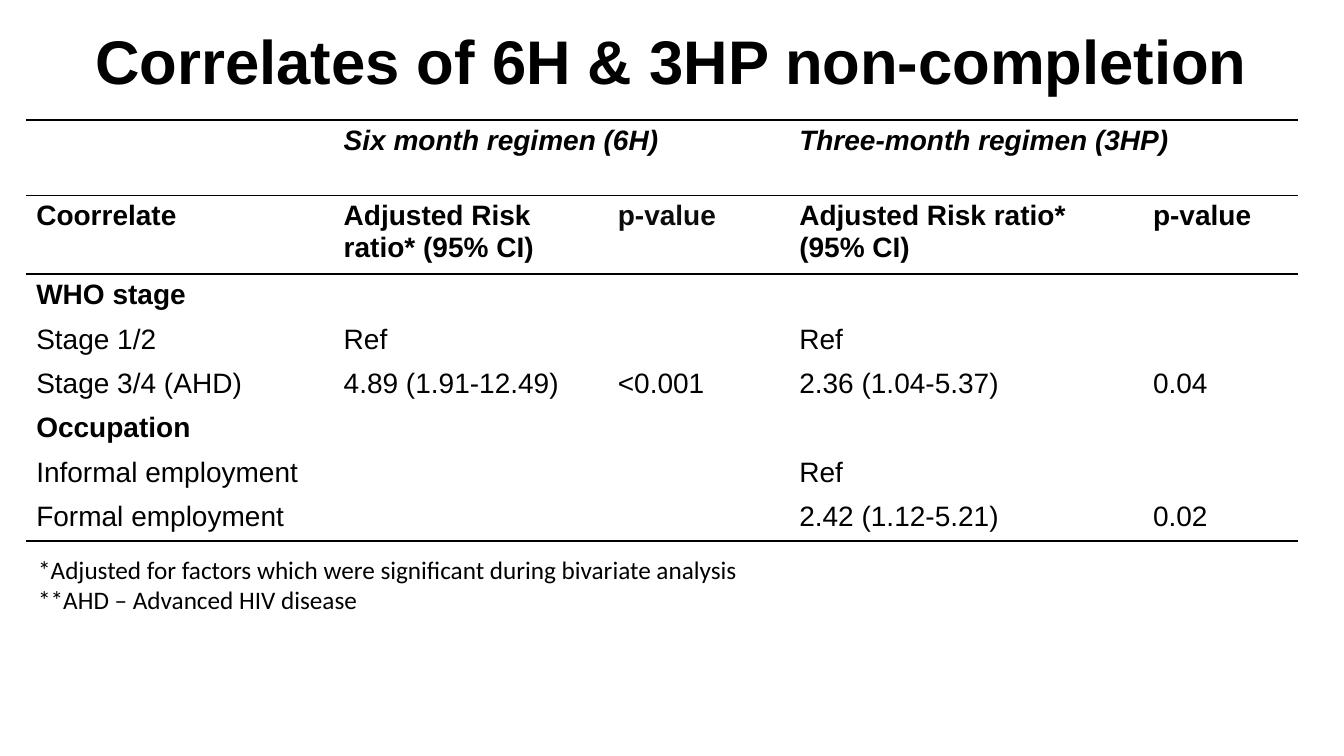
from dataclasses import dataclass

from lxml import etree
from pptx import Presentation
from pptx import util as u
from pptx.dml.color import RGBColor
from pptx.enum import text
from pptx.oxml import ns


@dataclass(frozen=True)
class Theme:
    """Colours, fonts and sizes of the slide."""
    ink: str = "000000"
    soft_ink: str = "0C0C0C"
    paper: str = "FFFFFF"
    heading_font: str = "Arial"
    note_font: str = "Calibri"
    title_size: int = 44
    table_size: int = 20
    note_size: int = 18
    rule: float = 1.5


THEME = Theme()
COLUMNS = [219.6, 195.84, 129.6, 252.72, 110.88]
ROWS = [54, 56.16] + [31.75] * 6
CONTENT = [
    ["", "Six month regimen (6H)", "", "Three-month regimen (3HP)", ""],
    ["Coorrelate", "Adjusted Risk ratio* (95% CI)", "p-value",
     "Adjusted Risk ratio* (95% CI)", "p-value"],
    ["WHO stage", "", "", "", ""],
    ["Stage 1/2", "Ref", "", "Ref", ""],
    ["Stage 3/4 (AHD)", "4.89 (1.91-12.49)", "<0.001", "2.36 (1.04-5.37)", "0.04"],
    ["Occupation", "", "", "", ""],
    ["Informal employment", "", "", "Ref", ""],
    ["Formal employment", "", "", "2.42 (1.12-5.21)", "0.02"],
]
GROUP_ROW, HEADING_ROW = 0, 1
BOLD_ROWS = {GROUP_ROW, HEADING_ROW, 2, 5}
RULED_EDGES = {0, 1, 2, len(ROWS)}
NOTES = [
    "*Adjusted for factors which were significant during bivariate analysis",
    "**AHD – Advanced HIV disease",
]


def write(para, words, size, font=THEME.heading_font, color=THEME.ink,
          bold=False, italic=False, align=text.PP_ALIGN.LEFT):
    """Add one formatted span to a paragraph."""
    para.alignment = align
    span = para.add_run()
    span.text = words
    span.font.name, span.font.size = font, u.Pt(size)
    span.font.bold, span.font.italic = bold, italic
    span.font.color.rgb = RGBColor.from_string(color)


def draw_edge(cell, side, ruled):
    """Give one side of a cell a rule or no line."""
    line = etree.SubElement(cell._tc.get_or_add_tcPr(), ns.qn("a:ln" + side))
    if ruled:
        line.set("w", str(u.Pt(THEME.rule)))
        fill = etree.SubElement(line, ns.qn("a:solidFill"))
        etree.SubElement(fill, ns.qn("a:srgbClr"), val=THEME.ink)
    else:
        etree.SubElement(line, ns.qn("a:noFill"))


def add_title(slide, left, top, width, height):
    """Place the slide title in its box."""
    title = slide.shapes.title
    title.left, title.top, title.width, title.height = map(u.Pt, (left, top, width, height))
    frame = title.text_frame
    frame.vertical_anchor = text.MSO_ANCHOR.MIDDLE
    write(frame.paragraphs[0], "Correlates of 6H & 3HP non-completion",
          THEME.title_size, bold=True, align=text.PP_ALIGN.CENTER)


def add_results(slide, left, top):
    """Place the table of risk ratios at a corner."""
    table = slide.shapes.add_table(
        len(ROWS), len(COLUMNS), u.Pt(left), u.Pt(top),
        u.Pt(sum(COLUMNS)), u.Pt(sum(ROWS))).table
    table.first_row = table.horz_banding = False
    for column, width in zip(table.columns, COLUMNS):
        column.width = u.Pt(width)
    for row, height in zip(table.rows, ROWS):
        row.height = u.Pt(height)
    for row, entries in enumerate(CONTENT):
        for column, words in enumerate(entries):
            cell = table.cell(row, column)
            for side, ruled in (("L", False), ("R", False), ("T", row in RULED_EDGES),
                                ("B", row + 1 in RULED_EDGES)):
                draw_edge(cell, side, ruled)
            cell.fill.solid()
            cell.fill.fore_color.rgb = RGBColor.from_string(THEME.paper)
            if words:
                soft = (row, column) == (HEADING_ROW, 2)
                write(cell.text_frame.paragraphs[0], words, THEME.table_size,
                      color=THEME.soft_ink if soft else THEME.ink,
                      bold=row in BOLD_ROWS, italic=row == GROUP_ROW)
    for first in (1, 3):
        table.cell(GROUP_ROW, first).merge(table.cell(GROUP_ROW, first + 1))


def add_notes(slide, left, top, width, height):
    """Place the table notes in their box."""
    box = slide.shapes.add_textbox(*map(u.Pt, (left, top, width, height)))
    frame = box.text_frame
    frame.word_wrap = True
    frame.auto_size = text.MSO_AUTO_SIZE.SHAPE_TO_FIT_TEXT
    for index, words in enumerate(NOTES):
        para = frame.add_paragraph() if index else frame.paragraphs[0]
        write(para, words, THEME.note_size, font=THEME.note_font)


def main():
    """Build and save the deck."""
    deck = Presentation()
    deck.slide_width, deck.slide_height = u.Pt(960), u.Pt(540)
    slide = deck.slides.add_slide(deck.slide_layouts[5])
    add_title(slide, 48, -2, 864, 90)
    add_results(slide, 18.72, 85.7)
    add_notes(slide, 20.16, 392.4, 531.36, 51)
    deck.save("out.pptx")


if __name__ == "__main__":
    main()
